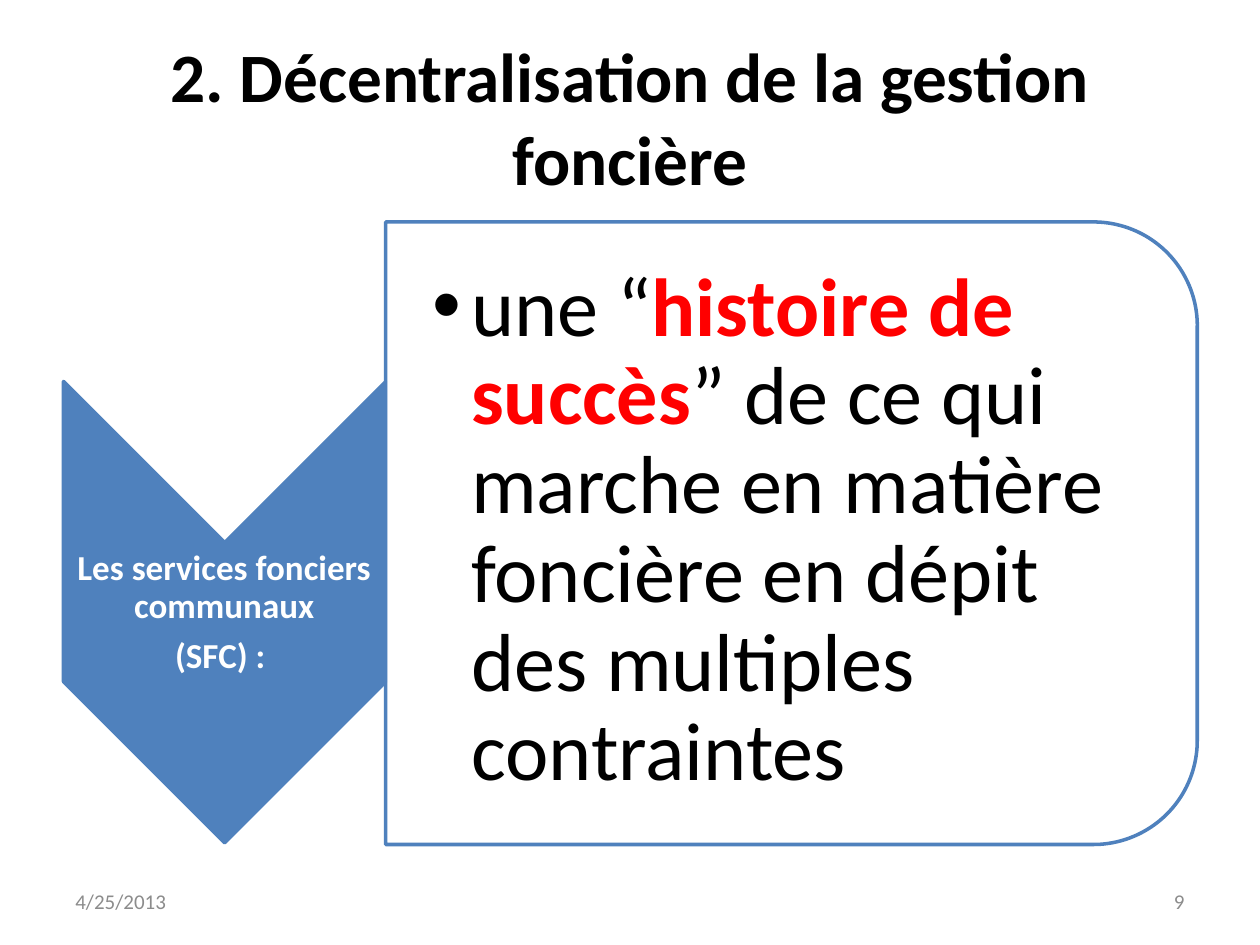
import pptx
import pptx.util
import pptx.dml.color
import pptx.enum.shapes
import pptx.enum.text
import pptx.oxml.ns
import lxml.etree

Cm = pptx.util.Cm
Pt = pptx.util.Pt
ALIGN = pptx.enum.text.PP_ALIGN
SHAPE = pptx.enum.shapes.MSO_SHAPE
qn = pptx.oxml.ns.qn

COLORS = {
    "black": "000000",
    "white": "FFFFFF",
    "grey": "8C8C8C",
    "blue": "4F81BD",
    "red": "FF0000",
}


def rgb(name):
    return pptx.dml.color.RGBColor.from_string(COLORS[name])


def format_text(paragraph, size, color, bold=False, align=ALIGN.LEFT):
    paragraph.alignment = align
    for run in paragraph.runs:
        run.font.name = "Calibri"
        run.font.size = Pt(size)
        run.font.bold = bold
        run.font.color.rgb = rgb(color)


presentation = pptx.Presentation()
presentation.slide_width = Cm(25.4)
presentation.slide_height = Cm(19.05)
slide = presentation.slides.add_slide(presentation.slide_layouts[5])

title = slide.shapes.title
title.left, title.top, title.width, title.height = Cm(1.27), Cm(0.76), Cm(22.86), Cm(3.18)
title.text_frame.text = "2. Décentralisation de la gestion foncière"
title.text_frame.vertical_anchor = pptx.enum.text.MSO_ANCHOR.MIDDLE
format_text(title.text_frame.paragraphs[0], 39.6, "black", True, ALIGN.CENTER)

rotated_shapes = [
    (SHAPE.CHEVRON, -0.12, 9.09, 9.3, 6.5, "blue"),
    (SHAPE.ROUND_2_SAME_RECTANGLE, 9.68, 2.57, 12.55, 16.36, "white"),
]
for kind, left, top, width, height, fill in rotated_shapes:
    shape = slide.shapes.add_shape(kind, Cm(left), Cm(top), Cm(width), Cm(height))
    shape.rotation = 90
    shape.shadow.inherit = False
    shape.fill.solid()
    shape.fill.fore_color.rgb = rgb(fill)
    shape.line.color.rgb = rgb("blue")
    shape.line.width = Pt(2)

panel_color = shape.fill._xPr.find(qn("a:solidFill")).find(qn("a:srgbClr"))
lxml.etree.SubElement(panel_color, qn("a:alpha"), val="90000")

text_boxes = [
    ("4/25/2013", 1.27, 17.65, 5.93, 1.02, 0.25, 0.13),
    ("9", 18.2, 17.65, 5.93, 1.02, 0.25, 0.13),
    ("Les services fonciers communaux\n(SFC) : ", 1.27, 10.97, 6.5, 2.79, 0.03, 0.03),
    ("", 7.77, 5.05, 15.75, 11.33, 0.94, 0.08),
]
frames = []
for text, left, top, width, height, inset_left, inset in text_boxes:
    box = slide.shapes.add_textbox(Cm(left), Cm(top), Cm(width), Cm(height))
    frame = box.text_frame
    frame.word_wrap = True
    frame.vertical_anchor = pptx.enum.text.MSO_ANCHOR.MIDDLE
    frame.margin_left = Cm(inset_left)
    frame.margin_right = Cm(min(inset_left, 0.25) if inset == 0.13 else inset)
    frame.margin_top = frame.margin_bottom = Cm(inset)
    frame.text = text
    frames.append(frame)

date, number, label, story = frames
format_text(date.paragraphs[0], 12, "grey")
format_text(number.paragraphs[0], 12, "grey", align=ALIGN.RIGHT)
for paragraph in label.paragraphs:
    format_text(paragraph, 20, "white", True, ALIGN.CENTER)
    paragraph.line_spacing = 0.9
    paragraph.space_after = Pt(7)

paragraph = story.paragraphs[0]
for text in (
    "une “",
    "histoire de succès",
    "” de ce qui marche en matière foncière en dépit des multiples contraintes",
):
    paragraph.add_run().text = text
format_text(paragraph, 47, "black")
highlight = paragraph.runs[1].font
highlight.bold = True
highlight.color.rgb = rgb("red")
paragraph.line_spacing = 0.9
paragraph.space_after = Pt(7)
properties = paragraph._p.get_or_add_pPr()
properties.set("marL", str(Cm(0.79)))
properties.set("indent", str(-Cm(0.79)))
lxml.etree.SubElement(properties, qn("a:buFont"), typeface="Arial")
lxml.etree.SubElement(properties, qn("a:buChar"), char="•")

presentation.save("out.pptx")
